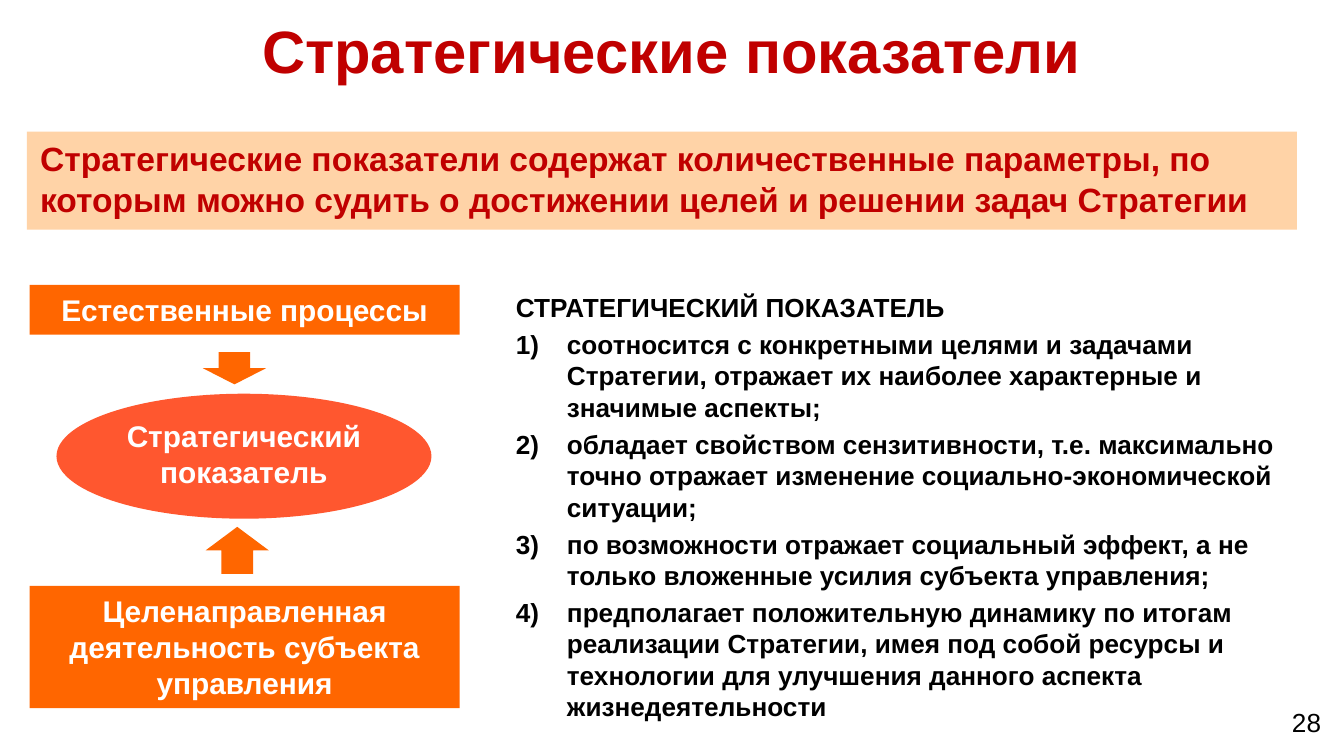
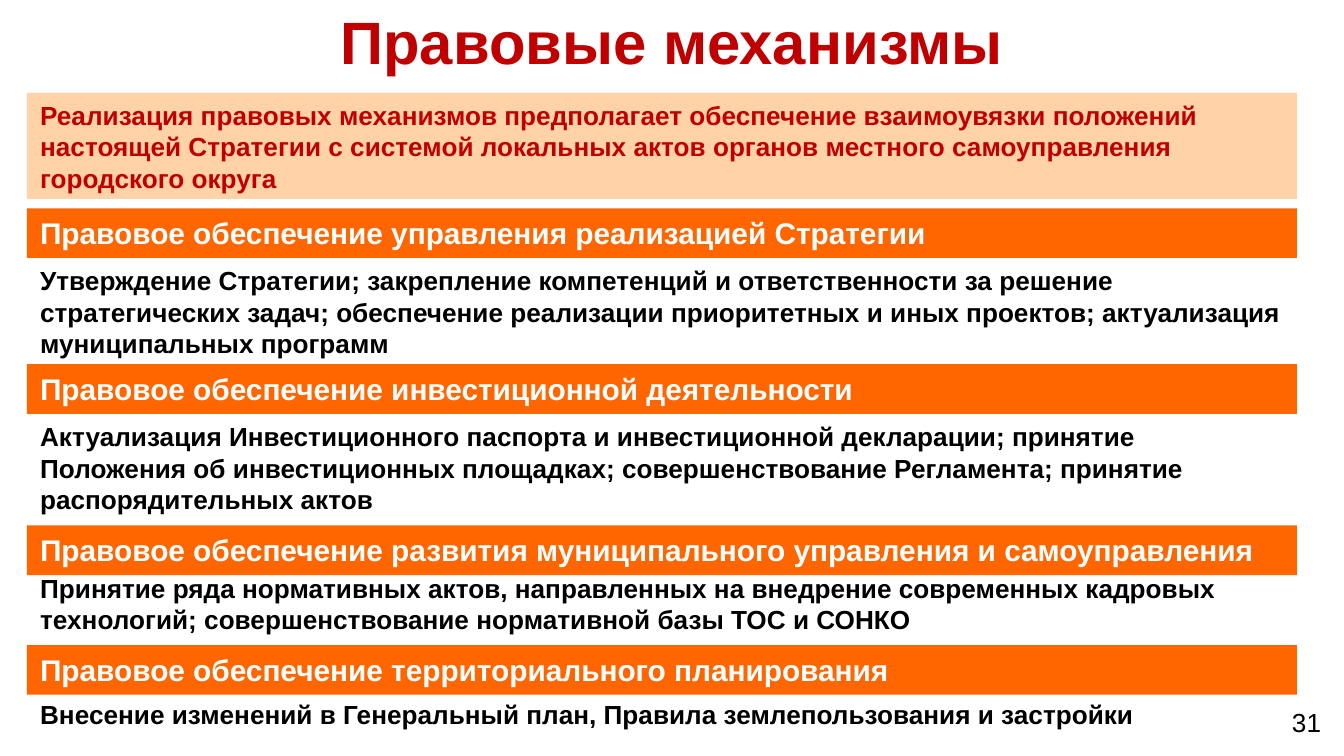
"""Build two slides on the indicators and legal mechanisms of a strategy."""
from dataclasses import dataclass

from lxml import etree
from pptx import Presentation
from pptx.dml.color import RGBColor
from pptx.enum.shapes import MSO_SHAPE
from pptx.enum.text import MSO_ANCHOR, MSO_AUTO_SIZE, PP_ALIGN
from pptx.oxml.ns import qn
from pptx.util import Inches, Pt

RECT, OVAL, ARROW = MSO_SHAPE.RECTANGLE, MSO_SHAPE.OVAL, MSO_SHAPE.DOWN_ARROW
LEFT, CENTER, RIGHT = PP_ALIGN.LEFT, PP_ALIGN.CENTER, PP_ALIGN.RIGHT
TOP, BOTTOM = MSO_ANCHOR.TOP, MSO_ANCHOR.BOTTOM
GROW, FIXED = MSO_AUTO_SIZE.SHAPE_TO_FIT_TEXT, MSO_AUTO_SIZE.NONE


@dataclass(frozen=True)
class Theme:
    font: str = "Arial"
    red: str = "C00000"
    peach: str = "FFD3A7"
    orange: str = "FF6600"
    coral: str = "FF572F"
    white: str = "FFFFFF"
    black: str = "000000"
    title: int = 32
    lead: int = 18
    heading: int = 16
    body: int = 14


THEME = Theme()
WIDTH = 10
HEIGHT = WIDTH * 9 / 16
BAND_LEFT, BAND_WIDTH, HEADING_HEIGHT = 0.2, 9.45, 0.37
SMALL_INSETS = (0.07, 0.04)

INDICATORS = {
    "title": "Стратегические показатели",
    "lead": "Стратегические показатели содержат количественные параметры, по "
            "которым можно судить о достижении целей и решении задач Стратегии",
    "page": "28",
}
SOURCES = [
    ("Естественные процессы", 2.12, HEADING_HEIGHT),
    ("Целенаправленная деятельность субъекта управления", 4.36, 0.91),
]
INDICATOR = "Стратегический показатель"
ARROWS = [((1.51, 2.62, 0.47, 0.24), 0), ((1.53, 3.92, 0.47, 0.35), 180)]
CRITERIA_HEADING = "СТРАТЕГИЧЕСКИЙ ПОКАЗАТЕЛЬ"
CRITERIA = [
    "соотносится с конкретными целями и задачами Стратегии, отражает их "
    "наиболее характерные и значимые аспекты;",
    "обладает свойством сензитивности, т.е. максимально точно отражает "
    "изменение социально-экономической ситуации;",
    "по возможности отражает социальный эффект, а не только вложенные "
    "усилия субъекта управления;",
    "предполагает положительную динамику по итогам реализации Стратегии, "
    "имея под собой ресурсы и технологии для улучшения данного аспекта "
    "жизнедеятельности",
]

MECHANISMS = {
    "title": "Правовые механизмы",
    "lead": "Реализация правовых механизмов предполагает обеспечение "
            "взаимоувязки положений настоящей Стратегии с системой локальных "
            "актов органов местного самоуправления городского округа",
    "page": "31",
}
SECTIONS = [
    (1.55, "Правовое обеспечение управления реализацией Стратегии",
     1.92, 0.81,
     "Утверждение Стратегии; закрепление компетенций и ответственности за "
     "решение стратегических задач; обеспечение реализации приоритетных и "
     "иных проектов; актуализация муниципальных программ"),
    (2.71, "Правовое обеспечение инвестиционной деятельности",
     3.08, 0.81,
     "Актуализация Инвестиционного паспорта и инвестиционной декларации; "
     "принятие Положения об инвестиционных площадках; совершенствование "
     "Регламента; принятие распорядительных актов"),
    (3.91, "Правовое обеспечение развития муниципального управления и "
           "самоуправления",
     4.21, 0.57,
     "Принятие ряда нормативных актов, направленных на внедрение современных "
     "кадровых технологий; совершенствование нормативной базы ТОС и СОНКО"),
    (4.8, "Правовое обеспечение территориального планирования",
     5.15, 0.34,
     "Внесение изменений в Генеральный план, Правила землепользования и "
     "застройки"),
]


def add_figure(slide, kind, box, fill):
    figure = slide.shapes.add_shape(kind, *map(Inches, box))
    figure.shadow.inherit = False
    figure.fill.solid()
    figure.fill.fore_color.rgb = RGBColor.from_string(fill)
    figure.line.fill.background()
    return figure


def number_paragraph(paragraph, indent=0.38):
    properties = paragraph._p.get_or_add_pPr()
    properties.set("marL", str(Inches(indent)))
    properties.set("indent", str(-Inches(indent)))
    numbering = etree.SubElement(properties, qn("a:buAutoNum"))
    numbering.set("type", "arabicParenR")


def add_text(slide, box, *texts, kind=None, fill=None, size=THEME.body,
             color=THEME.black, bold=True, align=LEFT, anchor=TOP,
             insets=(0.1, 0.05), fit=FIXED, after=0, spacing=None,
             numbered_from=None):
    if kind is None:
        holder = slide.shapes.add_textbox(*map(Inches, box))
    else:
        holder = add_figure(slide, kind, box, fill)
    frame = holder.text_frame
    frame.word_wrap = True
    frame.auto_size = fit
    frame.vertical_anchor = anchor
    frame.margin_left = frame.margin_right = Inches(insets[0])
    frame.margin_top = frame.margin_bottom = Inches(insets[1])
    for index, text in enumerate(texts):
        paragraph = frame.paragraphs[0] if index == 0 else frame.add_paragraph()
        paragraph.alignment = align
        paragraph.space_after = Pt(after)
        if spacing:
            paragraph.line_spacing = spacing
        if numbered_from is not None and index >= numbered_from:
            number_paragraph(paragraph)
        run = paragraph.add_run()
        run.text = text
        run.font.name = THEME.font
        run.font.size = Pt(size)
        run.font.bold = bold
        run.font.color.rgb = RGBColor.from_string(color)


def add_heading(slide, box, text, align=LEFT):
    add_text(slide, box, text, kind=RECT, fill=THEME.orange, align=align,
             size=THEME.heading, color=THEME.white, fit=GROW, after=6)


def start_slide(deck, content, title_top, lead_top, lead_height, lead_size):
    slide = deck.slides.add_slide(deck.slide_layouts[6])
    add_text(slide, (0, title_top, WIDTH, 0.48), content["title"],
             size=THEME.title, color=THEME.red, align=CENTER, anchor=BOTTOM,
             insets=(0.08, 0.04), spacing=0.93)
    add_text(slide, (BAND_LEFT, lead_top, BAND_WIDTH, lead_height),
             content["lead"], kind=RECT, fill=THEME.peach, size=lead_size,
             color=THEME.red)
    add_text(slide, (8.15, 5.24, 1.75, 0.39), content["page"], bold=False,
             align=RIGHT, insets=SMALL_INSETS, spacing=0.93)
    return slide


def build_indicators(deck):
    slide = start_slide(deck, INDICATORS, 0.21, 0.98, 0.73, THEME.lead)
    for source, top, height in SOURCES:
        add_heading(slide, (0.22, top, 3.2, height), source, align=CENTER)
    add_text(slide, (0.42, 2.93, 2.79, 0.93), INDICATOR, kind=OVAL,
             fill=THEME.coral, size=THEME.heading, color=THEME.white,
             align=CENTER, insets=SMALL_INSETS)
    for box, rotation in ARROWS:
        add_figure(slide, ARROW, box, THEME.orange).rotation = rotation
    add_text(slide, (3.74, 2.12, 5.91, 3.33), CRITERIA_HEADING, *CRITERIA,
             fit=GROW, after=3, numbered_from=1)


def build_mechanisms(deck):
    slide = start_slide(deck, MECHANISMS, 0.14, 0.69, 0.79, THEME.body)
    for heading_top, heading, measures_top, measures_height, measures in SECTIONS:
        add_heading(slide, (BAND_LEFT, heading_top, BAND_WIDTH, HEADING_HEIGHT),
                    heading)
        add_text(slide, (BAND_LEFT, measures_top, BAND_WIDTH, measures_height),
                 measures, fit=GROW)


def main():
    deck = Presentation()
    deck.slide_width, deck.slide_height = Inches(WIDTH), Inches(HEIGHT)
    build_indicators(deck)
    build_mechanisms(deck)
    deck.save("out.pptx")


if __name__ == "__main__":
    main()
